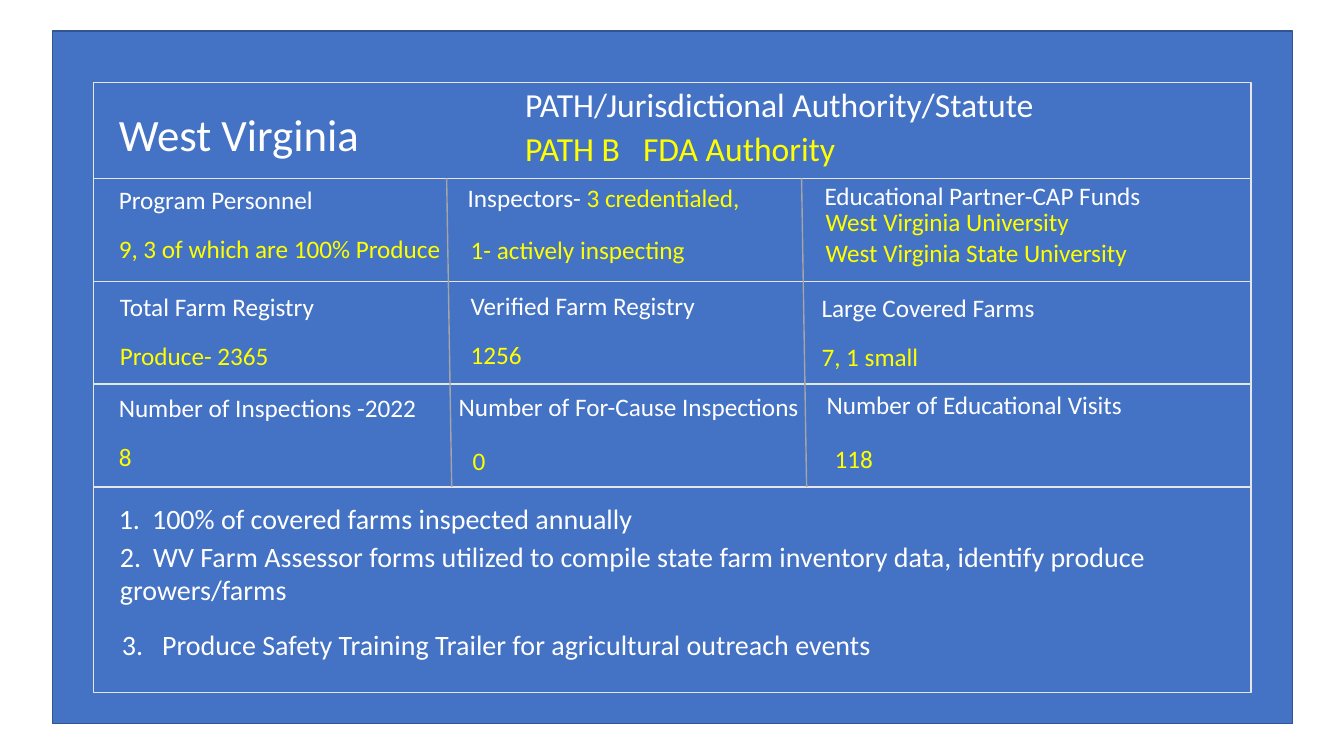
"""Build the West Virginia produce safety programme summary slide."""
from lxml.etree import SubElement
from pptx import Presentation
from pptx.dml.color import RGBColor
from pptx.enum.shapes import MSO_CONNECTOR as Connector, MSO_SHAPE as Shape
from pptx.enum.text import MSO_ANCHOR as Anchor, MSO_AUTO_SIZE as AutoSize
from pptx.oxml.ns import qn
from pptx.util import Inches, Pt

COLORS = {
    "panel": "4472C4",
    "frame": "325491",
    "border": "E7E6E6",
    "divider": "A5A5A5",
    "label": "FFFFFF",
    "value": "FFFF00",
}
FONT = "Calibri"
GRID_LEFT, GRID_TOP, GRID_WIDTH = 0.93, 1.77, 11.48
ROW_HEIGHT, COLUMN_WIDTH = 1.02, 3.48
TEXT_LEFT, VALUE_DROP = 1.08, 0.49
CELL_WIDTH, LINE_HEIGHT = 4.67, 0.42

CELLS = [
    [
        ("Program Personnel", (0, 0.01), "9, 3 of which are 100% Produce", (0, 0.01)),
        ([("Inspectors- ", "label"), ("3 credentialed,", "value")], (-0.02, -0.01),
         "1- actively inspecting", (0.01, 0.02)),
        ("Educational Partner-CAP Funds", (0.04, -0.03),
         "West Virginia University\nWest Virginia State University", (0.05, -0.26)),
    ],
    [
        ("Total Farm Registry", (0.01, 0.05), "Produce- 2365", (0.01, 0.05)),
        ("Verified Farm Registry", (0.01, 0.04), "1256", (0.01, 0.04)),
        ("Large Covered Farms", (0.01, 0.06), "7, 1 small", (0.01, 0.06)),
    ],
    [
        ("Number of Inspections -2022", (0, 0.03), "8", (0, 0.03)),
        ("Number of For-Cause Inspections", (-0.11, 0.02), "0", (0.03, 0.07)),
        ("Number of Educational Visits", (0.06, 0), "118", (0.14, 0.05)),
    ],
]

NOTES = [
    ("1.\t100% of covered farms inspected annually", 1.08, 4.93, 0.44, 0.33),
    ("2.\tWV Farm Assessor forms utilized to compile state farm inventory data, "
     "identify produce growers/farms", 1.09, 5.3, 0.77, 0.33),
    ("3.\tProduce Safety Training Trailer for agricultural outreach events",
     1.11, 6.18, 0.44, 0.4),
]


def color(name):
    """Return the named colour."""
    return RGBColor.from_string(COLORS[name])


def row_top(row):
    """Return the top of a grid row."""
    return GRID_TOP + row * ROW_HEIGHT


def add_panel(slide, left, top, width, height, border="border"):
    """Add a filled rectangle with a thin border."""
    shape = slide.shapes.add_shape(
        Shape.RECTANGLE, *map(Inches, (left, top, width, height)))
    shape.shadow.inherit = False
    shape.fill.solid()
    shape.fill.fore_color.rgb = color("panel")
    shape.line.color.rgb = color(border)
    shape.line.width = Pt(1)


def add_divider(slide, left):
    """Add a slightly slanted column divider across the three cell rows."""
    line = slide.shapes.add_connector(
        Connector.STRAIGHT, Inches(left), Inches(row_top(0)),
        Inches(left + 0.05), Inches(row_top(3)))
    line.line.color.rgb = color("divider")
    line.line.width = Pt(1)
    SubElement(line._element.spPr, qn("a:effectLst"))


def add_text(slide, text, left, top, *, width=CELL_WIDTH, height=LINE_HEIGHT,
             size=18, ink="label", tab=None):
    """Add a text box from a string or from a list of (text, ink) pieces."""
    box = slide.shapes.add_textbox(*map(Inches, (left, top, width, height)))
    frame = box.text_frame
    frame.word_wrap = True
    frame.auto_size = AutoSize.SHAPE_TO_FIT_TEXT
    frame.vertical_anchor = Anchor.TOP
    lines = [[(line, ink)] for line in text.split("\n")] if isinstance(text, str) else [text]
    for index, pieces in enumerate(lines):
        paragraph = frame.add_paragraph() if index else frame.paragraphs[0]
        for words, piece_ink in pieces:
            run = paragraph.add_run()
            run.text = words
            run.font.name = FONT
            run.font.size = Pt(size)
            run.font.color.rgb = color(piece_ink)
        if tab:
            stops = SubElement(paragraph._p.get_or_add_pPr(), qn("a:tabLst"))
            SubElement(stops, qn("a:tab"), pos=str(Inches(tab)), algn="l")


def add_header(slide):
    """Add the state name and its legal authority."""
    add_text(slide, "West Virginia", TEXT_LEFT, 1.01, width=4.87, height=0.64, size=32)
    add_text(slide, "PATH/Jurisdictional Authority/Statute", 5.11, 0.78,
             width=6.82, height=0.5, size=24)
    add_text(slide, "PATH B\tFDA Authority", 5.11, 1.22,
             width=7.13, height=0.5, size=24, ink="value", tab=1.17)


def add_cell(slide, row, column, label, label_shift, value, value_shift):
    """Add the label and value of one grid cell."""
    left, top = TEXT_LEFT + column * COLUMN_WIDTH, row_top(row)
    add_text(slide, label, left + label_shift[0], top + label_shift[1])
    add_text(slide, value, left + value_shift[0], top + VALUE_DROP + value_shift[1],
             ink="value")


def main():
    """Build and save the slide."""
    presentation = Presentation()
    presentation.slide_width, presentation.slide_height = Inches(13.33), Inches(7.5)
    slide = presentation.slides.add_slide(presentation.slide_layouts[6])

    add_panel(slide, 0.52, 0.31, 12.3, 6.87, border="frame")
    add_panel(slide, GRID_LEFT, 0.82, GRID_WIDTH, ROW_HEIGHT)
    for row, span in enumerate((1, 1, 1, 2)):
        add_panel(slide, GRID_LEFT, row_top(row), GRID_WIDTH, span * ROW_HEIGHT)
    for left in (4.43, 7.95):
        add_divider(slide, left)

    add_header(slide)
    for row, cells in enumerate(CELLS):
        for column, cell in enumerate(cells):
            add_cell(slide, row, column, *cell)
    for text, left, top, height, tab in NOTES:
        add_text(slide, text, left, top, width=10.62, height=height, size=20, tab=tab)

    presentation.save("out.pptx")


if __name__ == "__main__":
    main()
